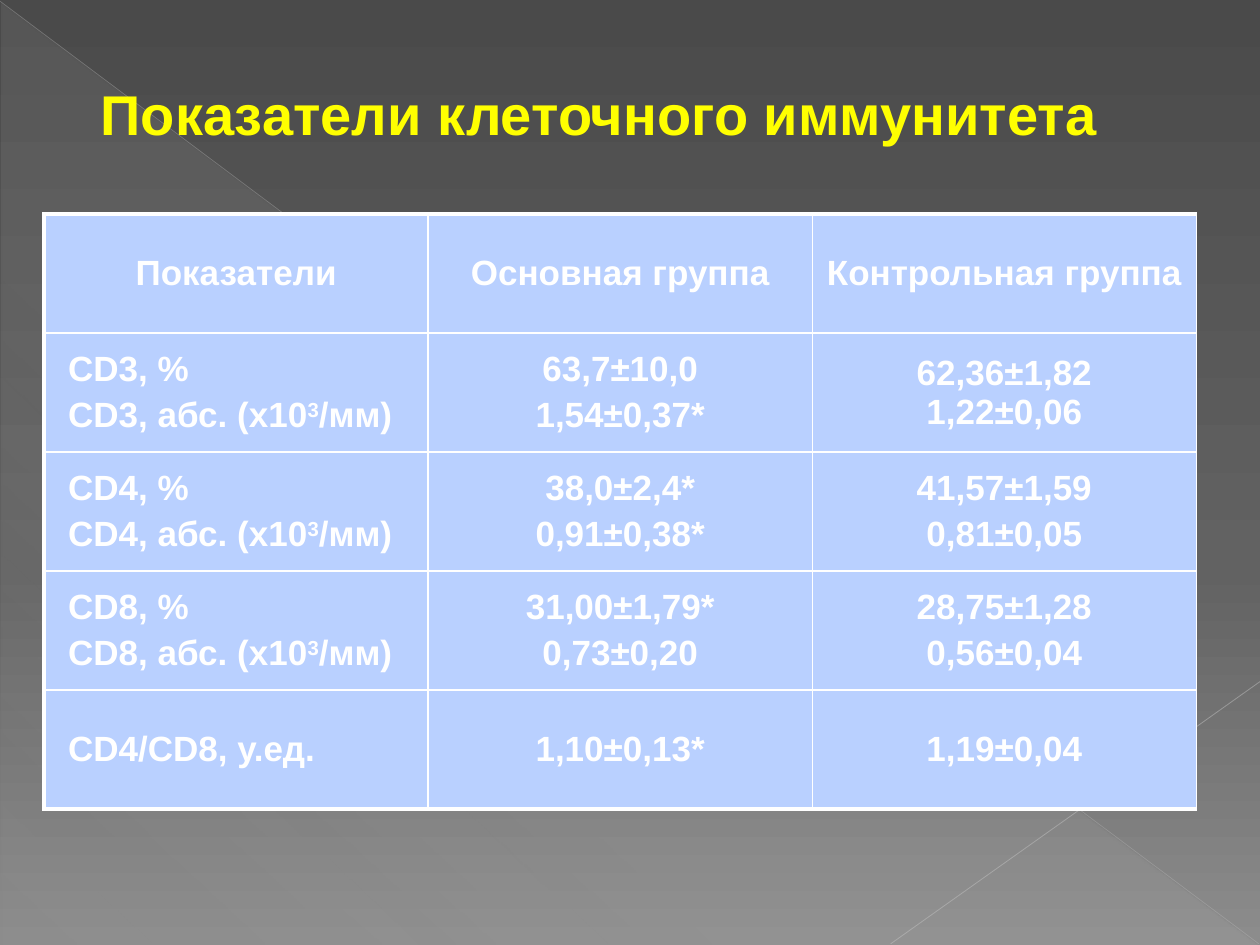
from lxml import etree
from pptx import Presentation, util as u
from pptx.dml.color import RGBColor
from pptx.enum import shapes, text
from pptx.oxml.ns import qn

# Content: each cell is a list of lines, ^ encloses a superscript
TITLE = "Показатели клеточного иммунитета"
ROWS = [
    (["Показатели"], ["Основная группа"], ["Контрольная группа"]),
    (["CD3, %", "CD3, абс. (х10^3^/мм)"], ["63,7±10,0", "1,54±0,37*"], ["62,36±1,82", "1,22±0,06"]),
    (["CD4, %", "CD4, абс. (х10^3^/мм)"], ["38,0±2,4*", "0,91±0,38*"], ["41,57±1,59", "0,81±0,05"]),
    (["CD8, %", "CD8, абс. (х10^3^/мм)"], ["31,00±1,79*", "0,73±0,20"], ["28,75±1,28", "0,56±0,04"]),
    (["CD4/CD8, у.ед."], ["1,10±0,13*"], ["1,19±0,04"]),
]
TIGHT_CELL = (1, 2)  # the one cell without paragraph spacing

# Decoration: gradient stops are (position %, colour, opacity %)
BACKGROUND = [(0, "4A4A4A", 100), (60, "626262", 100), (100, "8C8C8C", 100)]
TRIANGLE = [(0, "D2D2D2", 10), (70, "D2D2D2", 8), (100, "D2D2D2", 1)]
# start x, start y, end x, end y, colour, width, opacity %
LINES = [(0, 0.7, 719.3, 539.3, "BFBFBF", 0.39, 35),
         (720, 389.5, 509, 539.3, "C6C6C6", 0.47, 45)]

THEME = {"font": "Arial", "title": "FFFF00", "text": "FFFFFF", "cell": "B9D0FF",
         "border": "FFFFFF", "title_size": 32, "table_size": 20,
         "outer": 2.25, "inner": 1}

LEFT, TOP, COLUMN_WIDTH, ROW_HEIGHT = 25.2, 122.4, 219.5, 68


def add_colour(parent, colour, opacity=100):
    node = etree.SubElement(parent, qn("a:srgbClr"), val=colour)
    if opacity < 100:
        etree.SubElement(node, qn("a:alpha"), val=str(opacity * 1000))


def set_gradient(fill, owner, stops, angle):
    fill.gradient()
    gradient = next(owner.iter(qn("a:gradFill")))
    for child in list(gradient):
        gradient.remove(child)
    stop_list = etree.SubElement(gradient, qn("a:gsLst"))
    for position, colour, opacity in stops:
        stop = etree.SubElement(stop_list, qn("a:gs"), pos=str(position * 1000))
        add_colour(stop, colour, opacity)
    etree.SubElement(gradient, qn("a:lin"), ang=str(angle * 60000), scaled="0")


def write(frame, lines, size, colour, align=text.PP_ALIGN.LEFT, indent=0, before=0):
    frame.word_wrap = True
    for index, line in enumerate(lines):
        paragraph = frame.paragraphs[0] if index == 0 else frame.add_paragraph()
        paragraph.alignment = align
        paragraph.space_before = u.Pt(before)
        if indent:
            paragraph._p.get_or_add_pPr().set("marL", str(u.Pt(indent)))
        for part, wording in enumerate(line.split("^")):
            run = paragraph.add_run()
            run.text = wording
            run.font.name = THEME["font"]
            run.font.size = u.Pt(size)
            run.font.bold = True
            run.font.color.rgb = RGBColor.from_string(colour)
            if part % 2:
                run._r.get_or_add_rPr().set("baseline", "30000")


def set_borders(cell, widths):
    properties = cell._tc.get_or_add_tcPr()
    for index, (side, width) in enumerate(widths.items()):
        line = etree.Element(qn("a:ln" + side), w=str(u.Pt(width)))
        add_colour(etree.SubElement(line, qn("a:solidFill")), THEME["border"])
        properties.insert(index, line)


presentation = Presentation()
presentation.slide_width, presentation.slide_height = u.Pt(720), u.Pt(540)
slide = presentation.slides.add_slide(presentation.slide_layouts[6])

# Background and decoration
set_gradient(slide.background.fill, slide.element, BACKGROUND, 90)
triangle = slide.shapes.add_shape(
    shapes.MSO_SHAPE.RIGHT_TRIANGLE, u.Pt(0.7), u.Pt(1.4), u.Pt(718.6), u.Pt(538.6))
triangle.shadow.inherit = False
triangle.line.fill.background()
set_gradient(triangle.fill, triangle.element, TRIANGLE, 133)

for *ends, colour, width, opacity in LINES:
    connector = slide.shapes.add_connector(
        shapes.MSO_CONNECTOR.STRAIGHT, *(u.Pt(value) for value in ends))
    connector.line.width = u.Pt(width)
    connector.line.color.rgb = RGBColor.from_string(colour)
    colour_node = next(connector.element.spPr.iter(qn("a:srgbClr")))
    etree.SubElement(colour_node, qn("a:alpha"), val=str(opacity * 1000))
    etree.SubElement(connector.element.spPr, qn("a:effectLst"))

# Title
title = slide.shapes.add_textbox(u.Pt(10.8), u.Pt(37.4), u.Pt(686.2), u.Pt(70.6))
frame = title.text_frame
frame.margin_left = frame.margin_right = u.Pt(8.6)
frame.margin_top, frame.margin_bottom = u.Pt(8), u.Pt(4.3)
write(frame, [TITLE], THEME["title_size"], THEME["title"], indent=38.2)

# Table
row_count, column_count = len(ROWS), len(ROWS[0])
table = slide.shapes.add_table(
    row_count, column_count, u.Pt(LEFT), u.Pt(TOP),
    u.Pt(COLUMN_WIDTH * column_count), u.Pt(ROW_HEIGHT * row_count)).table
table.first_row = table.horz_banding = False
for column in table.columns:
    column.width = u.Pt(COLUMN_WIDTH)
for row in table.rows:
    row.height = u.Pt(ROW_HEIGHT)

for r, row in enumerate(ROWS):
    for c, lines in enumerate(row):
        cell = table.cell(r, c)
        cell.margin_left = cell.margin_right = cell.margin_top = cell.margin_bottom = 0
        cell.vertical_anchor = text.MSO_ANCHOR.MIDDLE
        cell.fill.solid()
        cell.fill.fore_color.rgb = RGBColor.from_string(THEME["cell"])
        outer, inner = THEME["outer"], THEME["inner"]
        set_borders(cell, {"L": outer if c == 0 else inner, "R": inner,
                           "T": outer if r == 0 else inner,
                           "B": outer if r == row_count - 1 else inner})
        is_label = c == 0 and r > 0
        write(cell.text_frame, lines, THEME["table_size"], THEME["text"],
              align=text.PP_ALIGN.LEFT if is_label else text.PP_ALIGN.CENTER,
              indent=13.7 if is_label else 0,
              before=0 if (r, c) == TIGHT_CELL else 4)

presentation.save("out.pptx")
